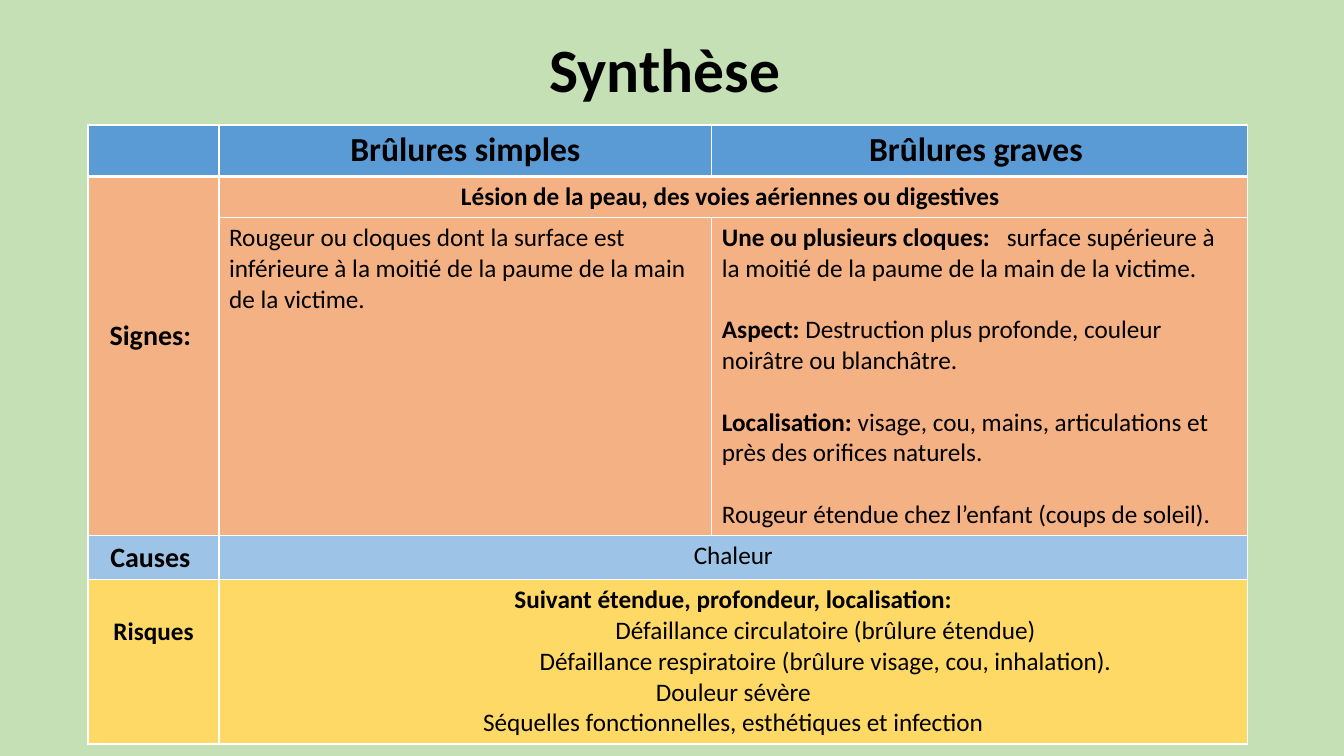
from lxml import etree
from pptx import Presentation
from pptx.dml.color import RGBColor
from pptx.enum.text import MSO_ANCHOR, PP_ALIGN
from pptx.oxml.ns import qn
from pptx.util import Cm, Pt

LEFT, MID = PP_ALIGN.LEFT, PP_ALIGN.CENTER
TOP, CENTER = MSO_ANCHOR.TOP, MSO_ANCHOR.MIDDLE
FONT = "Calibri"
HEX = {"page": "C5E0B4", "text": "000000", "line": "FFFFFF", "head": "5B9BD5",
       "signs": "F4B183", "cause": "9DC3E6", "risk": "FFD966"}
COLS = (3.3, 12.42, 13.5)
ROWS = (1.3, 1.02, 8, 1.12, 4.14)
FILLS = ("head", "signs", "signs", "cause", "risk")


def color(name):
    return RGBColor.from_string(HEX[name])


def style(para, size, bold, align):
    font = para.font
    font.name, font.size, font.bold = FONT, Pt(size), bold
    font.color.rgb = color("text")
    para.alignment = align


def border(cell, row):
    """Outline a cell, with a thick rule below the header row."""
    props = cell._tc.get_or_add_tcPr()
    for side in "LRTB":
        thick = (row, side) in ((0, "B"), (1, "T"))
        line = etree.SubElement(props, qn("a:ln" + side), w=str(Pt(3 if thick else 1)))
        fill = etree.SubElement(line, qn("a:solidFill"))
        etree.SubElement(fill, qn("a:srgbClr"), val=HEX["line"])


def write(cell, lines, size=18, bold=False, align=MID, gap=0):
    """Fill a cell with one paragraph per line."""
    frame = cell.text_frame
    for i, line in enumerate(lines):
        para = frame.add_paragraph() if i else frame.paragraphs[0]
        para.text = line
        style(para, size, bold, align)
        if i and gap:
            para.space_before = Pt(gap)
    return frame.paragraphs


def label(cell, text, size, lift=0):
    """Write a row heading, raised above the middle of its cell."""
    write(cell, [text], size, True)
    cell.vertical_anchor = CENTER
    cell.margin_bottom = Cm(0.13 + lift)


def severe(cell):
    """List the signs of severe burns, each with a bold lead."""
    signs = (
        ("Une ou plusieurs cloques:",
         "\tsurface supérieure à la moitié de la paume de la main de la victime."),
        ("Aspect: ", "Destruction plus profonde, couleur noirâtre ou blanchâtre."),
        ("Localisation: ",
         "visage, cou, mains, articulations et près des orifices naturels."),
        ("", "Rougeur étendue chez l’enfant (coups de soleil)."),
    )
    paras = write(cell, [""] * len(signs), align=LEFT, gap=22)
    for para, (lead, rest) in zip(paras, signs):
        if lead:
            run = para.add_run()
            run.text, run.font.bold = lead, True
        para.add_run().text = rest
    cell.margin_right = Cm(0.5)
    # Tab stop after the first lead
    props = paras[0]._p.get_or_add_pPr()
    stops = etree.Element(qn("a:tabLst"))
    etree.SubElement(stops, qn("a:tab"), pos=str(Cm(7.18)), algn="l")
    props.find(qn("a:defRPr")).addprevious(stops)


def risks(cell):
    """List the risks, with the two failures indented."""
    write(cell, (
        "Suivant étendue, profondeur, localisation:",
        "Défaillance circulatoire (brûlure étendue)",
        "Défaillance respiratoire (brûlure visage, cou, inhalation).",
        "Douleur sévère",
        "Séquelles fonctionnelles, esthétiques et infection"))
    paras = cell.text_frame.paragraphs
    paras[0].font.bold = True
    for para in paras[1:3]:
        para._p.get_or_add_pPr().set("marL", str(Cm(4.65)))


def heading(slide, left, top, width, height):
    title = slide.shapes.title
    title.left, title.top, title.width, title.height = left, top, width, height
    frame = title.text_frame
    frame.text = "Synthèse "
    frame.vertical_anchor = CENTER
    para = frame.paragraphs[0]
    style(para, 44, True, MID)
    para.line_spacing = 0.9


def grid(slide, left, top):
    shape = slide.shapes.add_table(len(ROWS), len(COLS), left, top,
                                   Cm(sum(COLS)), Cm(sum(ROWS)))
    table = shape.table
    for col, width in zip(table.columns, COLS):
        col.width = Cm(width)
    for r, (row, height) in enumerate(zip(table.rows, ROWS)):
        row.height = Cm(height)
        for cell in row.cells:
            border(cell, r)
            cell.fill.solid()
            cell.fill.fore_color.rgb = color(FILLS[r])
            cell.vertical_anchor = TOP

    # Merged areas
    table.cell(1, 0).merge(table.cell(2, 0))
    for r in (1, 3, 4):
        table.cell(r, 1).merge(table.cell(r, 2))

    # Header and row headings
    write(table.cell(0, 1), ["Brûlures simples"], 24, True)
    write(table.cell(0, 2), ["Brûlures graves "], 24, True)
    label(table.cell(1, 0), "Signes: ", 20, 1)
    label(table.cell(3, 0), "Causes ", 20)
    label(table.cell(4, 0), "Risques", 18, 1.5)

    # Contents
    write(table.cell(1, 1),
          ["Lésion de la peau, des voies aériennes ou digestives "], bold=True)
    write(table.cell(2, 1),
          ["Rougeur ou cloques dont la surface est inférieure à la moitié "
           "de la paume de la main de la victime."], align=LEFT)
    severe(table.cell(2, 2))
    write(table.cell(3, 1), ["Chaleur"])
    risks(table.cell(4, 1))


def main():
    deck = Presentation()
    deck.slide_width, deck.slide_height = Cm(33.87), Cm(19.05)
    slide = deck.slides.add_slide(deck.slide_layouts[5])
    back = slide.background.fill
    back.solid()
    back.fore_color.rgb = color("page")
    heading(slide, Cm(2.33), Cm(0), Cm(29.21), Cm(3.68))
    grid(slide, Cm(2.22), Cm(3.15))
    deck.save("out.pptx")


if __name__ == "__main__":
    main()
